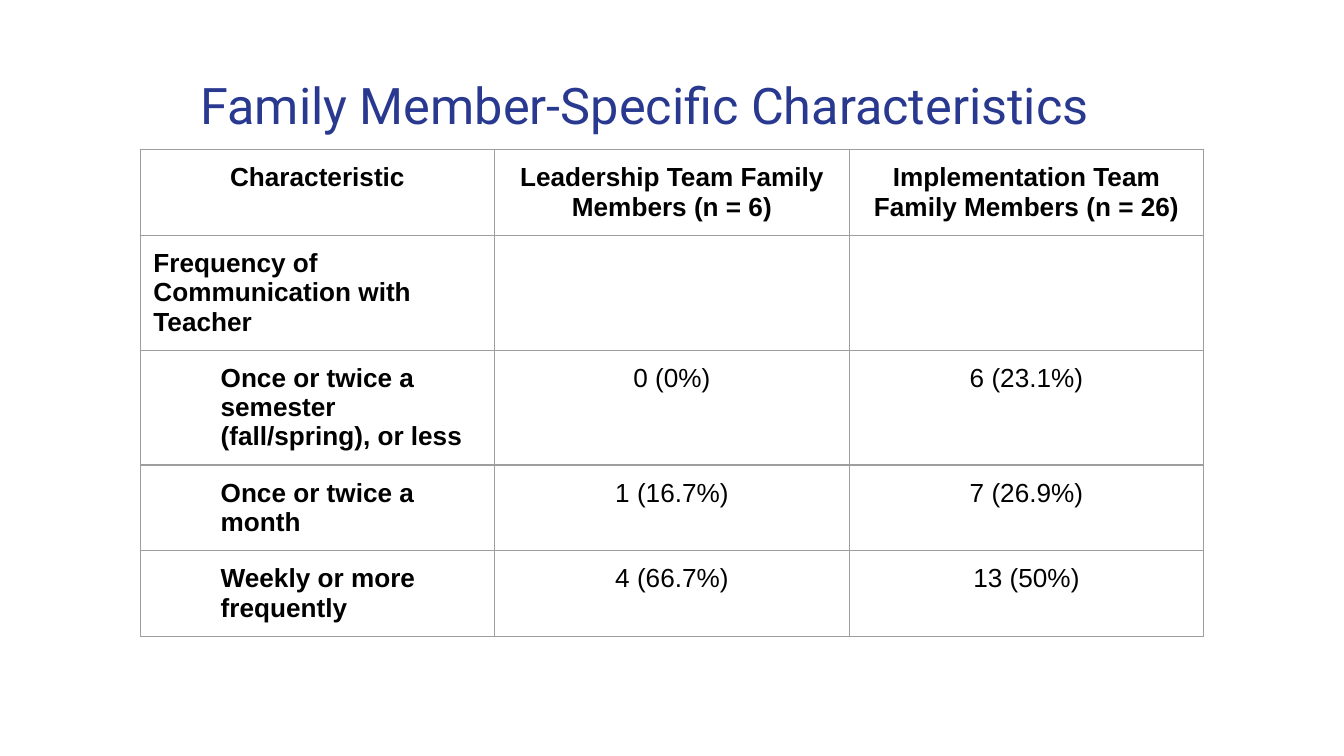
"""Build a slide with a table of family member characteristics."""
from pptx import Presentation
from pptx.dml.color import RGBColor
from pptx.enum.text import MSO_ANCHOR as ANCHOR, PP_ALIGN as ALIGN
from pptx.oxml.ns import qn
from pptx.util import Cm, Pt
from lxml.etree import SubElement

NAVY = RGBColor(0x2A, 0x39, 0x90)
BLACK = RGBColor(0x00, 0x00, 0x00)
GREY = RGBColor(0x9E, 0x9E, 0x9E)
PAD = Cm(0.25)
INDENT = Cm(1.27)
COL_WIDTH = Cm(6.7)
ROW_HEIGHTS = [Cm(h) for h in (1.62, 2.17, 2.17, 1.62, 1.62)]
ROWS = [
    ("Characteristic", "Leadership Team Family Members (n = 6)",
     "Implementation Team Family Members (n = 26)"),
    ("Frequency of Communication with Teacher", "", ""),
    ("Once or twice a semester (fall/spring), or less", "0 (0%)", "6 (23.1%)"),
    ("Once or twice a month", "1 (16.7%)", "7 (26.9%)"),
    ("Weekly or more frequently", "4 (66.7%)", "13 (50%)"),
]


def format_font(font, name, size, color, bold=False):
    font.name, font.size, font.bold = name, Pt(size), bold
    font.color.rgb = color


def add_title(s, text):
    sp = s.shapes.title
    sp.left, sp.top, sp.width, sp.height = Cm(0.86), Cm(1.14), Cm(23.67), Cm(1.68)
    tf = sp.text_frame
    tf.text = text
    tf.word_wrap = True
    tf.vertical_anchor = ANCHOR.MIDDLE
    tf.margin_left = tf.margin_top = tf.margin_bottom = PAD
    tf.margin_right = Cm(1.27)
    p = tf.paragraphs[0]
    p.alignment = ALIGN.CENTER
    format_font(p.runs[0].font, "Roboto", 27, NAVY)


def add_borders(cell):
    tcPr = cell._tc.get_or_add_tcPr()
    for side in ("a:lnL", "a:lnR", "a:lnT", "a:lnB"):
        ln = SubElement(tcPr, qn(side), w=str(Pt(0.75)))
        fill = SubElement(ln, qn("a:solidFill"))
        SubElement(fill, qn("a:srgbClr"), val=str(GREY))


def fill_cell(cell, text, bold, align, indent):
    add_borders(cell)
    cell.fill.background()
    cell.margin_left = cell.margin_right = PAD
    cell.margin_top = cell.margin_bottom = PAD
    cell.text_frame.text = text
    p = cell.text_frame.paragraphs[0]
    p.alignment = align
    p._p.get_or_add_pPr().set("marL", str(indent))
    for r in p.runs:
        format_font(r.font, "Arial", 14, BLACK, bold)


def add_characteristics(s):
    n_cols = len(ROWS[0])
    table = s.shapes.add_table(len(ROWS), n_cols, Cm(2.65), Cm(2.83),
                               COL_WIDTH * n_cols, sum(ROW_HEIGHTS)).table
    table.first_row = table.horz_banding = False
    for col in table.columns:
        col.width = COL_WIDTH
    for i, (height, texts) in enumerate(zip(ROW_HEIGHTS, ROWS)):
        table.rows[i].height = height
        for j, text in enumerate(texts):
            is_label = i > 0 and j == 0
            fill_cell(table.cell(i, j), text, bold=i == 0 or j == 0,
                      align=ALIGN.LEFT if is_label else ALIGN.CENTER,
                      indent=INDENT if is_label and i > 1 else 0)


def main():
    prs = Presentation()
    prs.slide_width, prs.slide_height = Cm(25.4), Cm(14.29)
    s = prs.slides.add_slide(prs.slide_layouts[5])
    add_title(s, "Family Member-Specific Characteristics")
    add_characteristics(s)
    prs.save("out.pptx")


if __name__ == "__main__":
    main()
